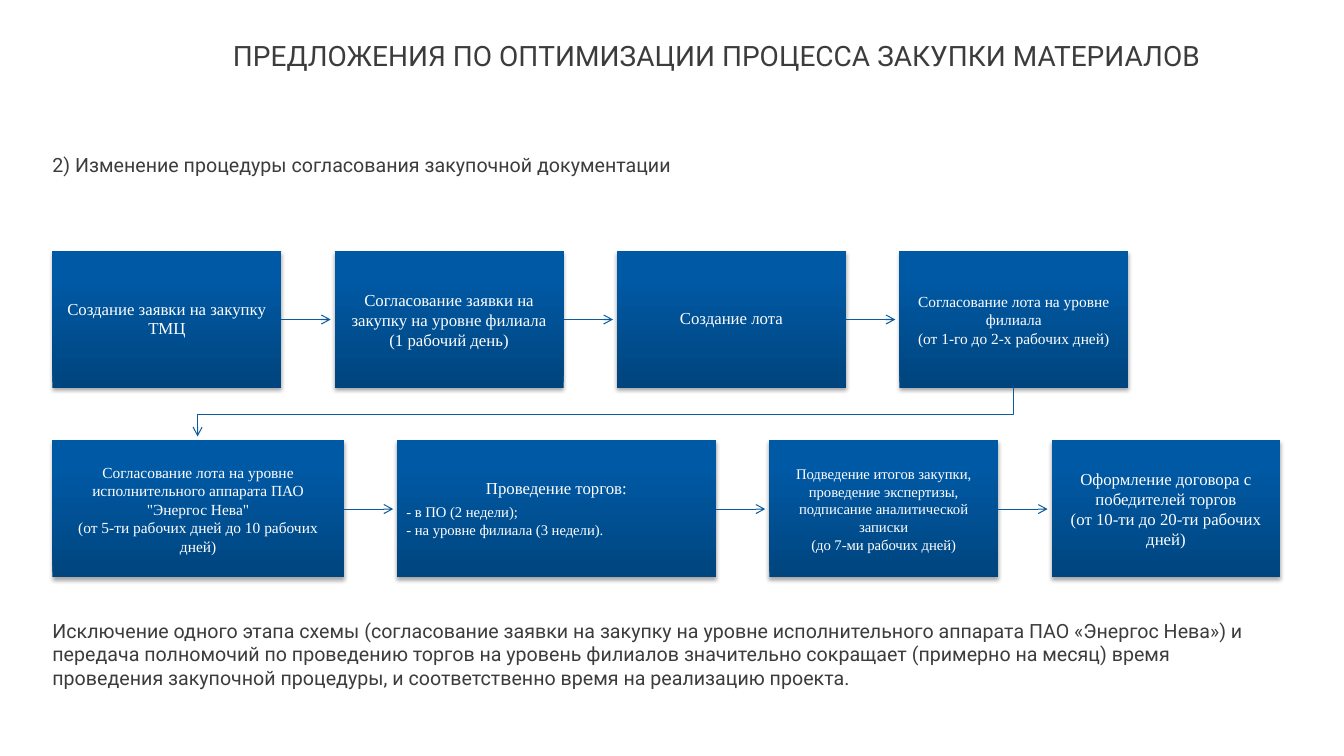
from copy import deepcopy

from lxml.etree import SubElement
from pptx import Presentation
from pptx.dml.color import RGBColor
from pptx.enum.shapes import MSO_CONNECTOR, MSO_SHAPE
from pptx.enum.text import MSO_ANCHOR, PP_ALIGN
from pptx.oxml.ns import qn
from pptx.util import Pt

PX = 9144  # 100 px to the inch
COLORS = {"ink": "3C3C3C", "line": "0C5B9D", "deep": "00457E", "mid": "0059A4",
          "top": "005AA5", "white": "FFFFFF", "shade": "000000"}


def rgb(name):
    return RGBColor.from_string(COLORS[name])


class Deck:
    sans = "Roboto"
    serif = "Times New Roman"

    def __init__(self, wide, high):
        self.prs = Presentation()
        self.prs.slide_width, self.prs.slide_height = wide * PX, high * PX
        self.slide = self.prs.slides.add_slide(self.prs.slide_layouts[6])
        self.shapes = self.slide.shapes

    def margins(self, frame, side, edge):
        frame.word_wrap = True
        frame.margin_left = frame.margin_right = side * PX
        frame.margin_top = frame.margin_bottom = edge * PX

    def style(self, para, size, face, color):
        for run in para.runs:
            run.font.size = Pt(size)
            run.font.name = face
            run.font.color.rgb = rgb(color)

    def text(self, x, y, w, h, words, size, edge=5, space=None):
        frame = self.shapes.add_textbox(x * PX, y * PX, w * PX, h * PX).text_frame
        self.margins(frame, 0, edge)
        frame.text = words
        para = frame.paragraphs[0]
        para.line_spacing = space
        self.style(para, size, self.sans, "ink")

    def paint(self, box):
        """Vertical gradient and a soft shadow below."""
        box.fill.gradient()
        box.fill.gradient_angle = 90
        stops = box.fill.gradient_stops
        for stop, color, place in zip(stops, ("deep", "mid"), (0, 0.8)):
            stop.color.rgb = rgb(color)
            stop.position = place
        props = box._element.spPr
        group = props.find(".//" + qn("a:gsLst"))
        group.append(deepcopy(group[-1]))
        last = box.fill.gradient_stops[2]
        last.color.rgb, last.position = rgb("top"), 1
        box.line.fill.background()
        box.shadow.inherit = False
        glow = SubElement(props.find(qn("a:effectLst")), qn("a:outerShdw"),
                          blurRad=str(Pt(3.1)), dist=str(Pt(1.8)),
                          dir="5400000", algn="ctr", rotWithShape="0")
        tint = SubElement(glow, qn("a:srgbClr"), val=COLORS["shade"])
        SubElement(tint, qn("a:alpha"), val="35000")

    def box(self, x, y, w, h, head, notes, size, small, tight):
        box = self.shapes.add_shape(MSO_SHAPE.RECTANGLE, x * PX, y * PX, w * PX, h * PX)
        self.paint(box)
        frame = box.text_frame
        self.margins(frame, 9, 9)
        frame.vertical_anchor = MSO_ANCHOR.MIDDLE
        frame.text = "\n".join([head, *notes])
        for i, para in enumerate(frame.paragraphs):
            listed = para.text.startswith("-")
            para.alignment = PP_ALIGN.LEFT if listed else PP_ALIGN.CENTER
            self.style(para, small if i else size, self.serif, "white")
        if tight:
            frame.paragraphs[0].line_spacing = 0.9
            frame.paragraphs[0].space_after = Pt(4)

    def finish(self, shape):
        """Thin line with an open arrowhead and no shadow."""
        shape.line.color.rgb = rgb("line")
        shape.line.width = Pt(0.75)
        props = shape._element.spPr
        SubElement(props.find(qn("a:ln")), qn("a:tailEnd"), type="arrow")
        SubElement(props, qn("a:effectLst"))

    def arrow(self, x, y, end):
        self.finish(self.shapes.add_connector(
            MSO_CONNECTOR.STRAIGHT, x * PX, y * PX, end * PX, y * PX))

    def bend(self, points):
        pen = self.shapes.build_freeform(*points[0], scale=PX)
        pen.add_line_segments(points[1:], close=False)
        shape = pen.convert_to_shape()
        shape.fill.background()
        self.finish(shape)


LEFT, HIGH, GAP, TIP = 52, 136, 53, 4
WIDE = 227
TOPS = (249, 437)

# Each step: width, heading, further lines, size, size of further lines, tight
ROWS = (
    ((WIDE, "Создание заявки на закупку ТМЦ", (), 12, 12, True),
     (WIDE, "Согласование заявки на закупку на уровне филиала",
      ("(1 рабочий день)",), 12, 12, False),
     (WIDE, "Создание лота", (), 12, 12, True),
     (WIDE, "Согласование лота на уровне филиала",
      ("(от 1-го до 2-х рабочих дней)",), 11, 11, False)),
    ((289, 'Согласование лота на уровне исполнительного аппарата ПАО "Энергос Нева"',
      ("(от 5-ти рабочих дней до 10 рабочих дней)",), 11, 11, False),
     (316, "Проведение торгов:",
      ("- в ПО (2 недели);", "- на уровне филиала (3 недели)."), 12, 10.5, True),
     (WIDE, "Подведение итогов закупки, проведение экспертизы, "
      "подписание аналитической записки",
      ("(до 7-ми рабочих дней)",), 10.5, 10.5, False),
     (WIDE, "Оформление договора с победителей торгов",
      ("(от 10-ти до 20-ти рабочих дней)",), 12, 12, False)),
)


def main():
    deck = Deck(1333, 750)

    # Headings
    deck.text(231, 42, 1038, 47,
              "ПРЕДЛОЖЕНИЯ ПО ОПТИМИЗАЦИИ ПРОЦЕССА ЗАКУПКИ МАТЕРИАЛОВ",
              20, edge=0, space=0.9)
    deck.text(LEFT, 147, 1216, 34,
              "2) Изменение процедуры согласования закупочной документации", 14)

    # Process steps, with an arrow between neighbours
    for top, row in zip(TOPS, ROWS):
        x = LEFT
        for i, (wide, *rest) in enumerate(row):
            deck.box(x, top, wide, HIGH, *rest)
            x += wide + GAP
            if i < len(row) - 1:
                deck.arrow(x - GAP, top + HIGH // 2, x - TIP)

    # Turn from the first row to the second
    start = LEFT + 3 * (WIDE + GAP) + WIDE // 2
    end = LEFT + ROWS[1][0][0] // 2
    base = TOPS[0] + HIGH
    turn = (base + TOPS[1]) // 2
    deck.bend([(start, base), (start, turn), (end, turn), (end, TOPS[1] - TIP)])

    # Conclusion
    deck.text(LEFT, 609, 1216, 81,
              "Исключение одного этапа схемы (согласование заявки на закупку на уровне "
              "исполнительного аппарата ПАО «Энергос Нева») и передача полномочий по "
              "проведению торгов на уровень филиалов значительно сокращает (примерно на "
              "месяц) время проведения закупочной процедуры, и соответственно время на "
              "реализацию проекта.", 14)

    deck.prs.save("out.pptx")


if __name__ == "__main__":
    main()
